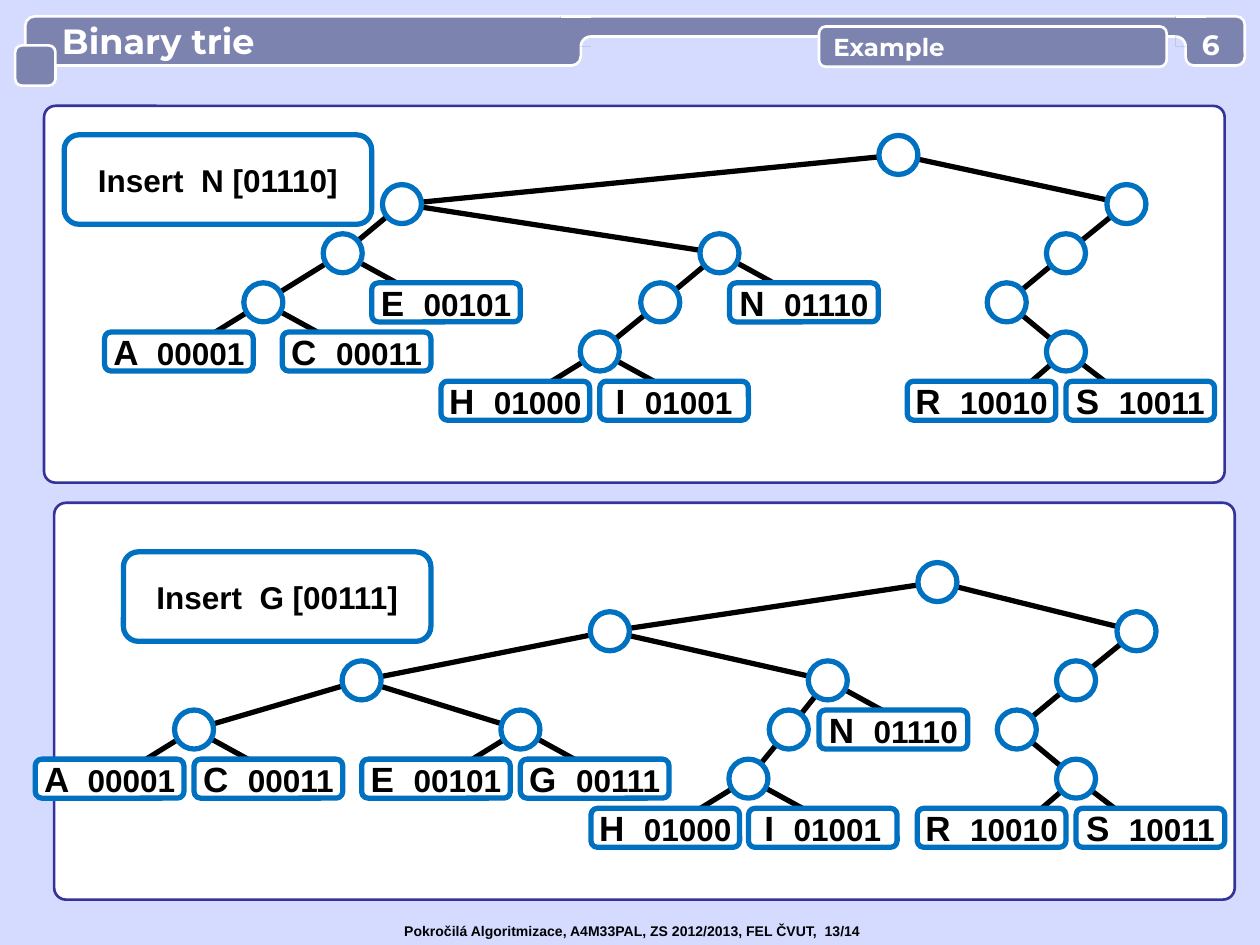
import dataclasses
import math

import lxml.etree
import pptx
import pptx.dml.color
import pptx.enum.shapes
import pptx.enum.text
import pptx.oxml.ns
import pptx.util

Inches = pptx.util.Inches
SHAPE = pptx.enum.shapes.MSO_SHAPE
ALIGN = pptx.enum.text.PP_ALIGN


@dataclasses.dataclass(frozen=True)
class Theme:
    back: str = "D5DAFF"
    bar: str = "7D83AF"
    white: str = "FFFFFF"
    black: str = "000000"
    node: str = "0070C0"
    panel: str = "333399"
    body: str = "Arial"
    head: str = "Montserrat"
    thin: float = 1.5
    thick: float = 3
    title: int = 20
    topic: int = 14
    number: int = 16
    letter: int = 20
    code: int = 18
    footer: int = 8


CODES = {"A": "00001", "C": "00011", "E": "00101", "G": "00111", "H": "01000",
         "I": "01001", "N": "01110", "R": "10010", "S": "10011"}
STEP = 0.39
NODE = 0.31
LEAF = 1.18

TRIES = [
    {"panel": (0.43, 3.99, 9.37, 3.15), "label": (0.98, 4.38), "text": "Insert  G [00111]", "top": 4.62,
     "nodes": {"": 7.44, "0": 4.84, "1": 9.02, "00": 2.87, "01": 6.57, "10": 8.54, "000": 1.54,
               "001": 4.13, "010": 6.26, "100": 8.07, "0100": 5.94, "1001": 8.54},
     "leaves": [("A", 4, 0.28), ("C", 4, 1.54), ("E", 4, 2.87), ("G", 4, 4.13), ("N", 3, 6.5),
                ("H", 5, 4.69), ("I", 5, 5.94), ("R", 5, 7.28), ("S", 5, 8.54)]},
    {"panel": (0.35, 0.84, 9.37, 2.99), "label": (0.51, 1.07), "text": "Insert  N [01110]", "top": 1.23,
     "nodes": {"": 7.13, "0": 3.19, "1": 8.94, "00": 2.72, "01": 5.71, "10": 8.46, "000": 2.09,
               "010": 5.24, "100": 7.99, "0100": 4.76, "1001": 8.46},
     "leaves": [("A", 4, 0.83), ("C", 4, 2.24), ("E", 3, 2.95), ("N", 3, 5.79), ("H", 5, 3.5),
                ("I", 5, 4.76), ("R", 5, 7.2), ("S", 5, 8.46)]},
]


class Deck:
    """Holds the theme and the current slide, and draws each kind of element."""

    def __init__(self, theme):
        self.t = theme
        self.prs = pptx.Presentation()
        self.prs.slide_width, self.prs.slide_height = Inches(10), Inches(7.5)
        self.s = self.prs.slides.add_slide(self.prs.slide_layouts[6])
        self.paint(self.s.background.fill, theme.back)

    def paint(self, fill, color):
        fill.solid()
        fill.fore_color.rgb = pptx.dml.color.RGBColor.from_string(color)

    def outline(self, sp, color, width):
        self.paint(sp.line.fill, color)
        sp.line.width = pptx.util.Pt(width)

    def dress(self, sp, fill=None, line=None, width=0):
        sp.shadow.inherit = False
        if fill:
            self.paint(sp.fill, fill)
        else:
            sp.fill.background()
        if line:
            self.outline(sp, line, width)
        else:
            sp.line.fill.background()
        return sp

    def shape(self, kind, box, fill, line=None, width=0, adj=None):
        sp = self.s.shapes.add_shape(kind, *map(Inches, box))
        if adj is not None:
            sp.adjustments[0] = adj
        return self.dress(sp, fill, line, width)

    def text(self, sp, runs, color, font, align=ALIGN.CENTER, inset=0, wrap=True):
        tf = sp.text_frame
        frame = {"word_wrap": wrap, "vertical_anchor": pptx.enum.text.MSO_ANCHOR.MIDDLE,
                 "margin_left": Inches(inset), "margin_right": 0, "margin_top": 0, "margin_bottom": 0}
        for key, value in frame.items():
            setattr(tf, key, value)
        p = tf.paragraphs[0]
        p.alignment = align
        for words, size in runs:
            r = p.add_run()
            r.text = words
            for key, value in {"name": font, "size": pptx.util.Pt(size), "bold": True}.items():
                setattr(r.font, key, value)
            r.font.color.rgb = pptx.dml.color.RGBColor.from_string(color)

    def textbox(self, box, *args, **kwargs):
        self.text(self.s.shapes.add_textbox(*map(Inches, box)), *args, **kwargs)

    def line(self, start, end, color, width):
        c = self.s.shapes.add_connector(pptx.enum.shapes.MSO_CONNECTOR.STRAIGHT,
                                        *map(Inches, (*start, *end)))
        self.outline(c, color, width)
        lxml.etree.SubElement(c._element.spPr, pptx.oxml.ns.qn("a:effectLst"))

    def bar(self, box, adj=0.17):
        return self.shape(SHAPE.ROUNDED_RECTANGLE, box, self.t.bar, self.t.white, self.t.thin, adj)

    def outlined(self, kind, box):
        return self.shape(kind, box, self.t.white, self.t.node, self.t.thick)

    def polygon(self, points, closed):
        start, *rest = [tuple(map(Inches, point)) for point in points]
        builder = self.s.shapes.build_freeform(*start)
        builder.add_line_segments(rest, close=closed)
        return builder.convert_to_shape()

    def joint(self, left, center, side):
        t = self.t
        self.shape(SHAPE.RECTANGLE, (left, 0.13, 0.24, 0.24), t.bar)
        self.line((left, 0.13), (left + 0.24, 0.13), t.white, t.thin)
        angles = [math.pi / 2 * i / 12 for i in range(13)]
        arc = [(center + side * 0.08 * math.cos(a), 0.37 - 0.08 * math.sin(a)) for a in angles]
        self.dress(self.polygon([*arc, (center, 0.37)], True), t.back)
        self.dress(self.polygon(arc, False), None, t.white, t.thin)

    def header(self):
        t = self.t
        sp = self.bar((0.2, 0.13, 4.41, 0.39), 0.19)
        self.text(sp, [("Binary trie", t.title)], t.white, t.head, ALIGN.LEFT, 0.27)
        self.bar((4.61, 0.13, 4.88, 0.16), 0.5)
        self.joint(4.45, 4.69, -1)
        self.bar((0.12, 0.36, 0.32, 0.32))
        self.bar((9.41, 0.13, 0.47, 0.39))
        self.joint(9.33, 9.33, 1)
        sp = self.bar((6.5, 0.21, 2.76, 0.32))
        self.text(sp, [("Example", t.topic)], t.white, t.head, ALIGN.LEFT, 0.1)
        self.textbox((9.41, 0.22, 0.4, 0.27), [("6", t.number)], t.white, t.head)

    def footer(self):
        words = "Pokročilá Algoritmizace, A4M33PAL, ZS 2012/2013, FEL ČVUT,  13/14"
        self.textbox((3.11, 7.27, 3.9, 0.24), [(words, self.t.footer)], self.t.black, self.t.body,
                     ALIGN.LEFT, 0.1, False)

    def trie(self, panel, label, text, top, nodes, leaves):
        t = self.t
        self.shape(SHAPE.ROUNDED_RECTANGLE, panel, t.white, t.panel, t.thin, 0.03)
        sp = self.outlined(SHAPE.ROUNDED_RECTANGLE, (*label, 2.44, 0.71))
        self.text(sp, [(text, t.code)], t.black, t.body)
        spots = {prefix: (x, top + STEP * len(prefix)) for prefix, x in nodes.items()}
        ends = {prefix: spot for prefix, spot in spots.items() if prefix}
        for letter, depth, _ in leaves:
            prefix = CODES[letter][:depth]
            shift = 0.71 if prefix[-1] == "1" else -0.63
            drop = NODE / 2 if prefix[0] == "1" else 0
            ends[prefix] = (nodes[prefix[:-1]] + shift, top + STEP * depth + drop)
        for prefix, end in ends.items():
            self.line(spots[prefix[:-1]], end, t.black, t.thick)
        for x, y in spots.values():
            self.outlined(SHAPE.OVAL, (x - NODE / 2, y - NODE / 2, NODE, NODE))
        for letter, depth, left in leaves:
            y = top + STEP * depth - NODE / 2
            sp = self.outlined(SHAPE.ROUNDED_RECTANGLE, (left, y, LEAF, NODE))
            self.text(sp, [(letter + "  ", t.letter), (CODES[letter], t.code)], t.black, t.body)


def main():
    deck = Deck(Theme())
    deck.header()
    for trie in TRIES:
        deck.trie(**trie)
    deck.footer()
    deck.prs.save("out.pptx")


if __name__ == "__main__":
    main()
